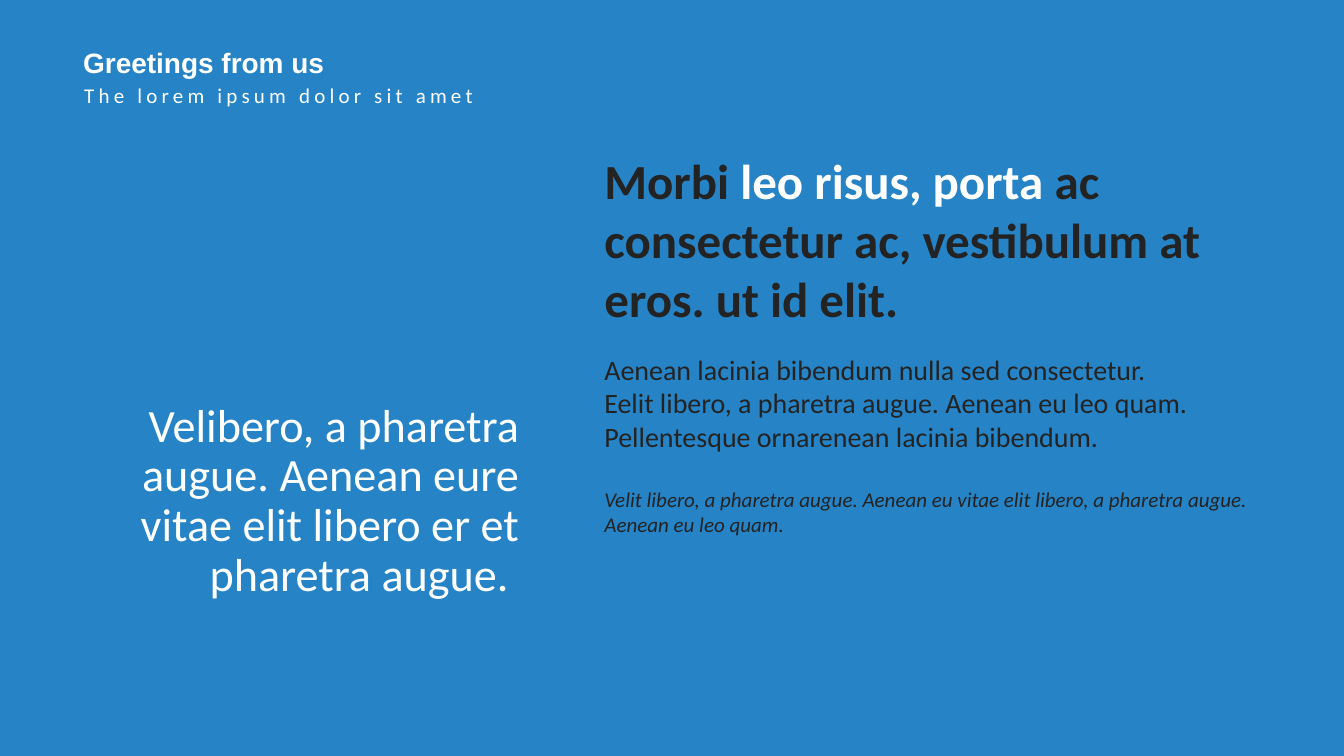
from pptx import Presentation
from pptx.dml.color import RGBColor
from pptx.enum.shapes import MSO_SHAPE
from pptx.enum.text import MSO_ANCHOR, MSO_AUTO_SIZE, PP_ALIGN
from pptx.util import Inches, Pt

WIDTH, HEIGHT = 26.66, 15
COLUMN, ROW = WIDTH / 100, HEIGHT / 100
BLUE, WHITE, DARK = "2683C6", "FFFFFF", "232323"
TITLE = {"name": "Arial", "size": Pt(40), "bold": True}
SUBTITLE = {"name": "Calibri", "size": Pt(30)}
QUOTE = {"name": "Calibri", "size": Pt(66)}
HEADING = {"name": "Calibri", "size": Pt(70), "bold": True}
BODY = {"name": "Calibri", "size": Pt(40)}
NOTE = {"name": "Calibri", "size": Pt(30), "italic": True}


def colour(value):
    """Turn a hex string into a colour."""
    return RGBColor.from_string(value)


def assign(target, values):
    """Set each attribute of the target from a dict."""
    for name, value in values.items():
        setattr(target, name, value)


def measure(area):
    """Turn columns and rows of the grid into lengths."""
    return [Inches(share * unit) for share, unit in zip(area, (COLUMN, ROW) * 2)]


def place(shape, area, inset, anchor):
    """Fit a text shape to its area and return its text frame."""
    assign(shape, dict(zip(("left", "top", "width", "height"), measure(area))))
    margins = ("margin_left", "margin_top", "margin_right", "margin_bottom")
    assign(shape.text_frame, dict.fromkeys(margins, Inches(inset)))
    assign(shape.text_frame, {
        "word_wrap": True, "auto_size": MSO_AUTO_SIZE.NONE,
        "vertical_anchor": anchor,
    })
    return shape.text_frame


def write(para, spans, style, layout):
    """Fill a paragraph with coloured spans in one style."""
    assign(para, {"alignment": PP_ALIGN.LEFT, **layout})
    for text, shade in spans:
        span = para.add_run()
        span.text = text
        assign(span.font, style)
        span.font.color.rgb = colour(shade)


def add_box(page, area, inset, anchor):
    """Draw an unfilled outline for text and return its text frame."""
    left, top, width, height = measure(area)
    outline = page.shapes.build_freeform(left, top)
    outline.add_line_segments([
        (left + width, top), (left + width, top + height), (left, top + height),
    ])
    box = outline.convert_to_shape()
    box.fill.background()
    box.line.fill.background()
    box.shadow.inherit = False
    return place(box, area, inset, anchor)


def add_backdrop(page, area):
    """Lay a blue panel behind everything else."""
    panel = page.shapes.add_shape(MSO_SHAPE.RECTANGLE, *measure(area))
    panel.fill.solid()
    panel.fill.fore_color.rgb = colour(BLUE)
    panel.line.fill.background()
    panel.shadow.inherit = False
    page.shapes._spTree.insert(2, panel._element)


def add_header(page, area):
    """Set the title above a widely spaced subtitle."""
    left, top, width, height = area
    title = place(page.shapes.title, (left, top, width * 0.85, height * 0.62),
                  0.06, MSO_ANCHOR.MIDDLE)
    write(title.paragraphs[0], [("Greetings from us", WHITE)], TITLE, {"line_spacing": 1.0})
    subtitle = add_box(page, (left + 0.08, top + height * 0.52, width, height * 0.48),
                       0.06, MSO_ANCHOR.MIDDLE)
    para = subtitle.paragraphs[0]
    write(para, [("The lorem ipsum dolor sit amet", WHITE)], SUBTITLE, {})
    para.runs[0].font._element.set("spc", "600")


def add_quote(page, area):
    """Set the right-aligned quotation."""
    frame = add_box(page, area, 0.06, MSO_ANCHOR.MIDDLE)
    text = "Velibero, a pharetra augue. Aenean eure vitae elit libero er et pharetra augue. "
    write(frame.paragraphs[0], [(text, WHITE)], QUOTE,
          {"alignment": PP_ALIGN.RIGHT, "line_spacing": 0.9})


def add_article(page, area):
    """Set the heading, body and closing note in one column."""
    frame = add_box(page, area, 0, MSO_ANCHOR.TOP)
    heading = [
        ("Morbi ", DARK), ("leo risus, porta ", WHITE),
        ("ac consectetur ac, vestibulum at eros. ut id elit.", DARK),
    ]
    write(frame.paragraphs[0], heading, HEADING, {})
    rows = [
        ("Aenean lacinia bibendum nulla sed consectetur.", BODY, 36),
        ("Eelit libero, a pharetra augue. Aenean eu leo quam. "
         "Pellentesque ornarenean lacinia bibendum.", BODY, 0),
        ("Velit libero, a pharetra augue. Aenean eu vitae elit libero, "
         "a pharetra augue. Aenean eu leo quam.", NOTE, 48),
    ]
    for text, style, gap in rows:
        write(frame.add_paragraph(), [(text, DARK)], style, {"space_before": Pt(gap)})


def main():
    """Build the greeting slide and save it."""
    deck = Presentation()
    assign(deck, {"slide_width": Inches(WIDTH), "slide_height": Inches(HEIGHT)})
    page = deck.slides.add_slide(deck.slide_layouts[5])
    add_backdrop(page, (0, 0, 100, 100))
    add_header(page, (5.96, 5.27, 55.21, 9.53))
    add_quote(page, (5.93, 51.13, 32.93, 30.53))
    add_article(page, (44.97, 19.93, 48.91, 57.53))
    deck.save("out.pptx")


if __name__ == "__main__":
    main()
